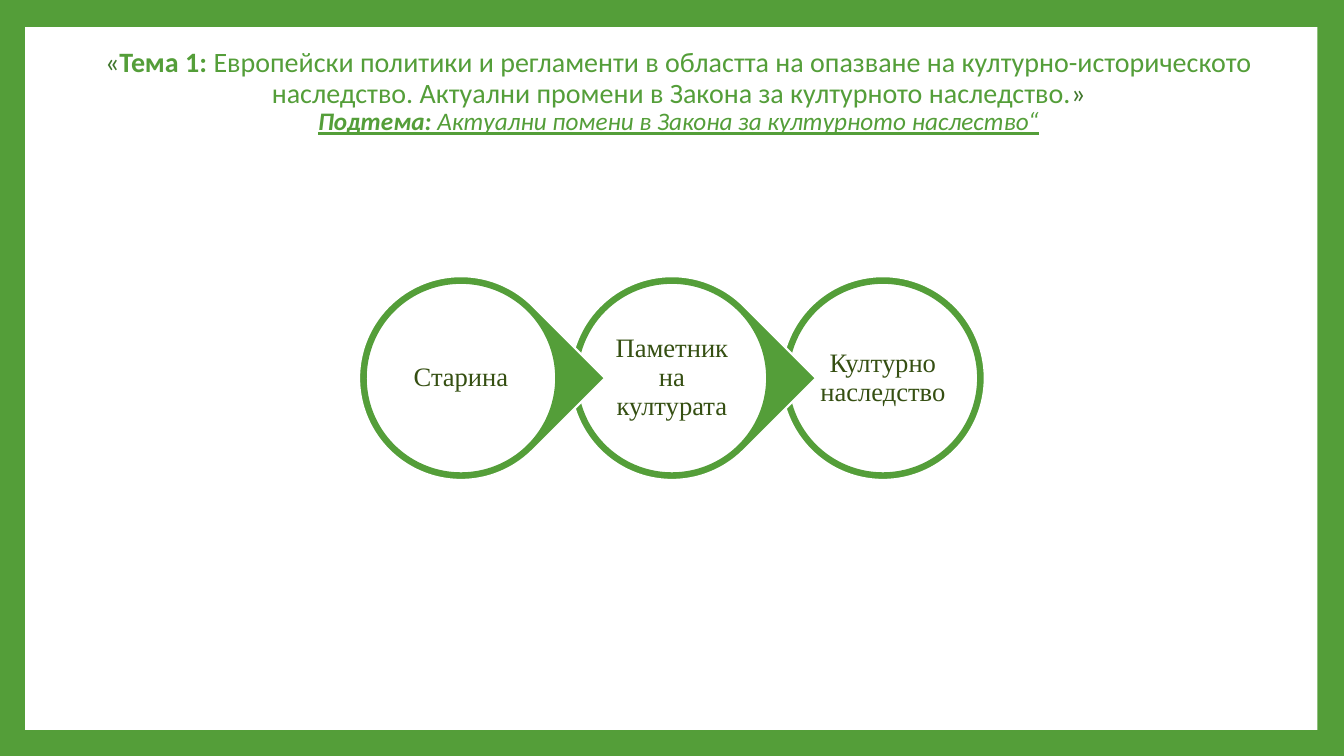
from pptx import Presentation
from pptx.dml.color import RGBColor
from pptx.enum.shapes import MSO_SHAPE as Kind
from pptx.enum.text import MSO_ANCHOR as Anchor, PP_ALIGN as Align
from pptx.util import Pt

GREEN, MID, DARK, WHITE = "549E39", "3F762B", "354F12", "FFFFFF"
STEPS = ["Старина", "Паметник на културата", "Културно наследство"]
LEFT, TOP, SIZE, PITCH, RIM = 256.5, 197.3, 145.5, 150.7, 4.7
TITLE = [
    [
        ("«", MID, {}),
        ("Тема 1: ", GREEN, {"bold": True}),
        ("Европейски политики и регламенти в областта на опазване на "
         "културно-историческото наследство. Актуални промени в Закона "
         "за културното наследство.", GREEN, {}),
        ("»", MID, {}),
    ],
    [
        ("Подтема: ", GREEN,
         {"size": Pt(18), "bold": True, "italic": True, "underline": True}),
        ("Актуални помени в Закона за културното наслество“", GREEN,
         {"size": Pt(18), "italic": True, "underline": True}),
    ],
]


def paint(color, tone):
    """Set a solid colour from a hex string."""
    if hasattr(color, "solid"):
        color.solid()
        color = color.fore_color
    color.rgb = RGBColor.from_string(tone)


def setup(target, values):
    """Set the attributes named in a dict."""
    for name, value in values.items():
        setattr(target, name, value)


def add_run(para, text, tone, style):
    """Append one formatted run."""
    run = para.add_run()
    run.text = text
    setup(run.font, style)
    paint(run.font.color, tone)


def add_form(slide, kind, box, tone, edge=None):
    """Draw a filled preset shape."""
    form = slide.shapes.add_shape(kind, *map(Pt, box))
    form.shadow.inherit = False
    paint(form.fill, tone)
    if edge:
        paint(form.line.fill, edge)
        form.line.width = Pt(1.5)
    else:
        form.line.fill.background()
    return form


def add_step(slide, index):
    """Draw one ringed step, pointed unless it is the last."""
    left = LEFT + index * PITCH
    last = index == len(STEPS) - 1
    kind = Kind.OVAL if last else Kind.TEAR
    back = add_form(slide, kind, (left, TOP, SIZE, SIZE), GREEN, WHITE)
    if not last:
        back.rotation = 45
    side = SIZE - 2 * RIM
    disc = add_form(slide, Kind.OVAL, (left + RIM, TOP + RIM, side, side),
                    WHITE, GREEN)
    frame = disc.text_frame
    sides = ("left", "top", "right", "bottom")
    setup(frame, {"word_wrap": True, "vertical_anchor": Anchor.MIDDLE,
                  **{f"margin_{name}": Pt(2) for name in sides}})
    para = frame.paragraphs[0]
    setup(para, {"alignment": Align.CENTER, "line_spacing": 0.9})
    add_run(para, STEPS[index], DARK,
            {"name": "Times New Roman", "size": Pt(19)})


def add_title(slide):
    """Write the topic and subtopic lines."""
    box = slide.shapes.add_textbox(Pt(31.5), Pt(28), Pt(906.5), Pt(76))
    frame = box.text_frame
    setup(frame, {"word_wrap": True, "vertical_anchor": Anchor.MIDDLE})
    for index, parts in enumerate(TITLE):
        para = frame.add_paragraph() if index else frame.paragraphs[0]
        setup(para, {"alignment": Align.CENTER, "line_spacing": 0.9})
        for text, tone, style in parts:
            add_run(para, text, tone,
                    {"name": "Calibri", "size": Pt(20), **style})


def main():
    """Build and save the slide."""
    deck = Presentation()
    setup(deck, {"slide_width": Pt(960), "slide_height": Pt(540)})
    slide = deck.slides.add_slide(deck.slide_layouts[6])
    paint(slide.background.fill, GREEN)
    add_form(slide, Kind.RECTANGLE, (18, 19.4, 923, 502), WHITE)
    for index in reversed(range(len(STEPS))):
        add_step(slide, index)
    add_title(slide)
    deck.save("out.pptx")


if __name__ == "__main__":
    main()
